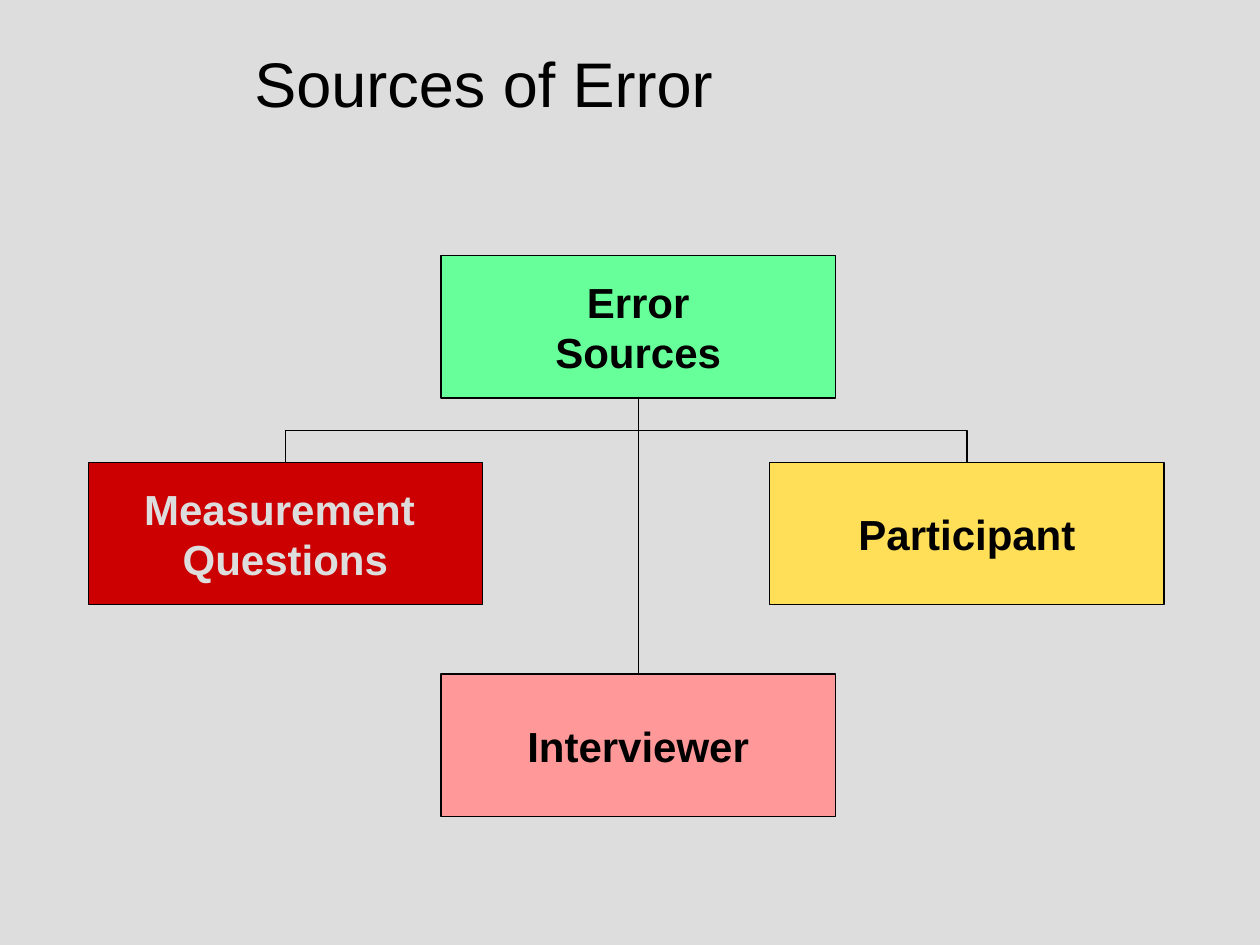
import pptx
import pptx.util
import pptx.dml.color
import pptx.enum.shapes
import pptx.enum.text
import pptx.oxml.ns
import lxml.etree

Inches, Pt = pptx.util.Inches, pptx.util.Pt
RGB = pptx.dml.color.RGBColor
CONNECTOR = pptx.enum.shapes.MSO_CONNECTOR
ALIGN = pptx.enum.text.PP_ALIGN
qn = pptx.oxml.ns.qn

BLACK = RGB(0x00, 0x00, 0x00)
GRAY = RGB(0xDD, 0xDD, 0xDD)
GREEN = RGB(0x66, 0xFF, 0x99)
RED = RGB(0xCC, 0x00, 0x00)
PINK = RGB(0xFF, 0x99, 0x99)
YELLOW = RGB(0xFF, 0xDF, 0x57)

TITLE = "Sources of Error"
BOXES = {
    "root": (["Error", "Sources"], 1, 0, GREEN, BLACK),
    "questions": (["Measurement ", "Questions"], 0, 1, RED, GRAY),
    "interviewer": (["Interviewer"], 1, 2, PINK, BLACK),
    "participant": (["Participant"], 2, 1, YELLOW, BLACK),
}
BRANCHES = {"questions": {"rot": "5400000"},
            "participant": {"rot": "16200000", "flipH": "1"}}

COLUMNS = [Inches(x) for x in (0.7, 3.5, 6.11)]
ROWS = [Inches(y) for y in (2.03, 3.67, 5.35)]
BOX_W, BOX_H = Inches(3.13), Inches(1.13)


def write(tf, lines, align, **formats):
    tf.vertical_anchor = pptx.enum.text.MSO_ANCHOR.MIDDLE
    for i, line in enumerate(lines):
        p = tf.paragraphs[0] if i == 0 else tf.add_paragraph()
        p.alignment = align
        r = p.add_run()
        r.text = line
        color = formats["color"]
        r.font.color.rgb = color
        for name, value in formats.items():
            if name != "color":
                setattr(r.font, name, value)


def add_box(s, lines, column, row, fill, color):
    sp = s.shapes.add_shape(pptx.enum.shapes.MSO_SHAPE.RECTANGLE,
                            COLUMNS[column], ROWS[row], BOX_W, BOX_H)
    sp.shadow.inherit = False
    sp.fill.solid()
    sp.fill.fore_color.rgb = fill
    sp.line.color.rgb = BLACK
    sp.line.width = Pt(0.75)
    sp.text_frame.word_wrap = False
    write(sp.text_frame, lines, ALIGN.CENTER,
          name="Arial", size=Pt(24), bold=True, color=color)
    return sp


def link(s, kind, parent, child):
    c = s.shapes.add_connector(kind, 0, 0, 0, 0)
    c.begin_connect(parent, 2)
    c.end_connect(child, 0)
    c.line.color.rgb = BLACK
    c.line.width = Pt(0.75)
    lxml.etree.SubElement(c._element.spPr, qn("a:effectLst"))
    return c


def turn_downward(c, turn):
    center_x, center_y = c.left + c.width // 2, c.top + c.height // 2
    drop, span = c.height, c.width
    c.left, c.top = center_x - drop // 2, center_y - span // 2
    c.width, c.height = drop, span
    xfrm = c._element.spPr.find(qn("a:xfrm"))
    xfrm.attrib.pop("flipH", None)
    for name, value in turn.items():
        xfrm.set(name, value)


def main():
    prs = pptx.Presentation()
    prs.slide_width, prs.slide_height = Inches(10), Inches(7.5)
    s = prs.slides.add_slide(prs.slide_layouts[6])
    s.background.fill.solid()
    s.background.fill.fore_color.rgb = GRAY

    title = s.shapes.add_textbox(Inches(1.92), Inches(0.03), Inches(7.92), Inches(1.25))
    title.text_frame.word_wrap = True
    write(title.text_frame, [TITLE], ALIGN.LEFT,
          name="Arial", size=Pt(36), color=BLACK)

    boxes = {key: add_box(s, *box) for key, box in BOXES.items()}
    for key, turn in BRANCHES.items():
        turn_downward(link(s, CONNECTOR.ELBOW, boxes["root"], boxes[key]), turn)
    link(s, CONNECTOR.STRAIGHT, boxes["root"], boxes["interviewer"])
    prs.save("out.pptx")


if __name__ == "__main__":
    main()
